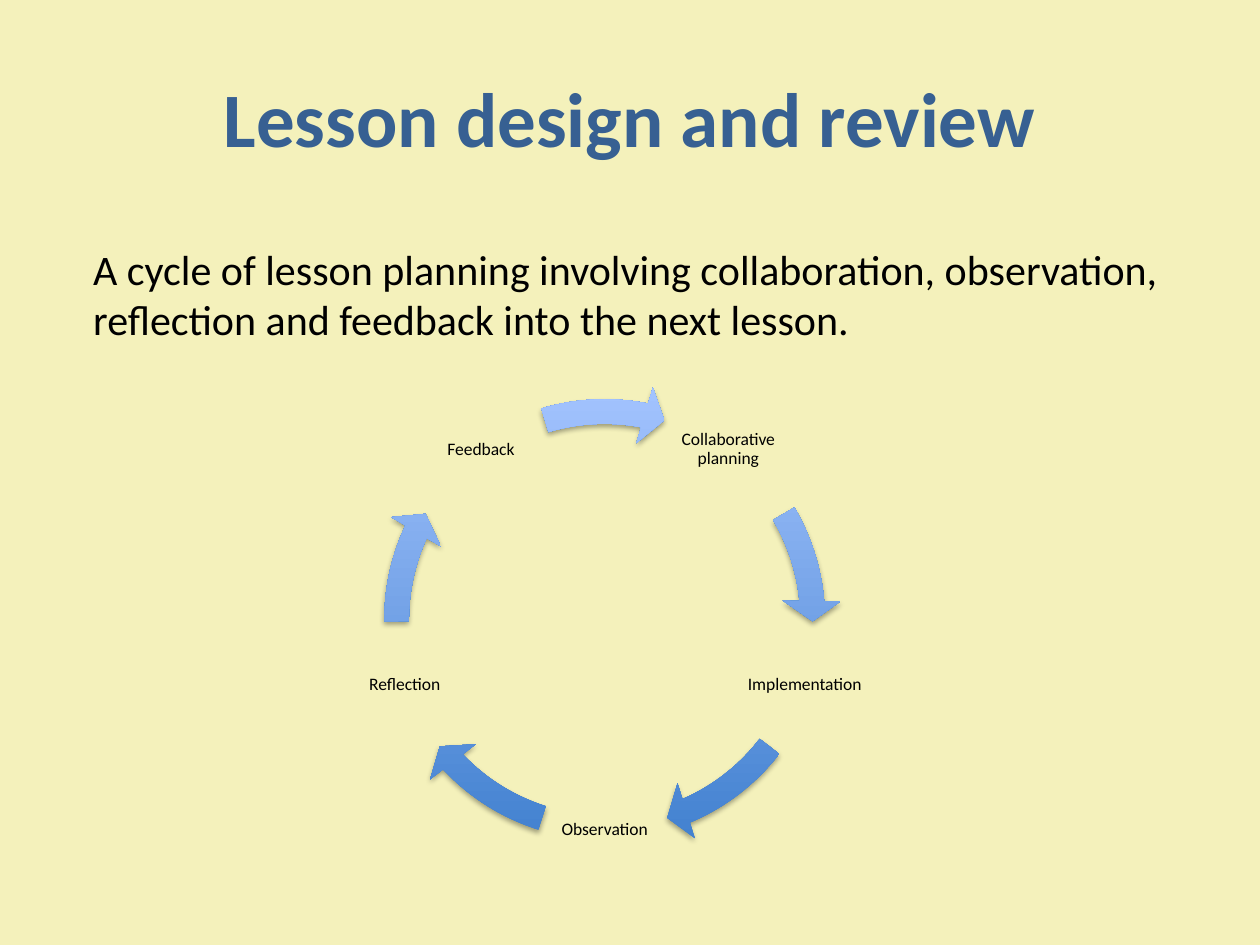
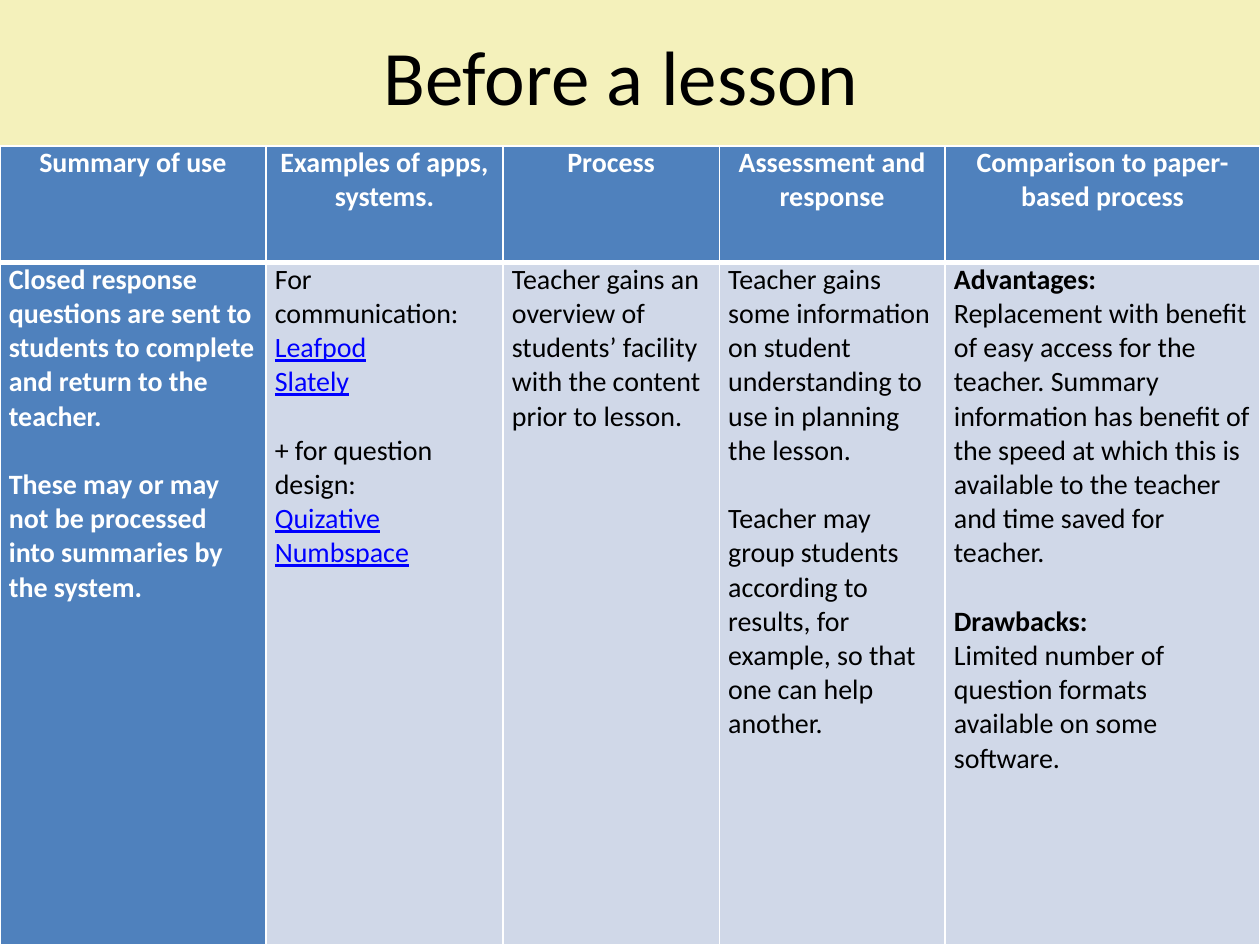
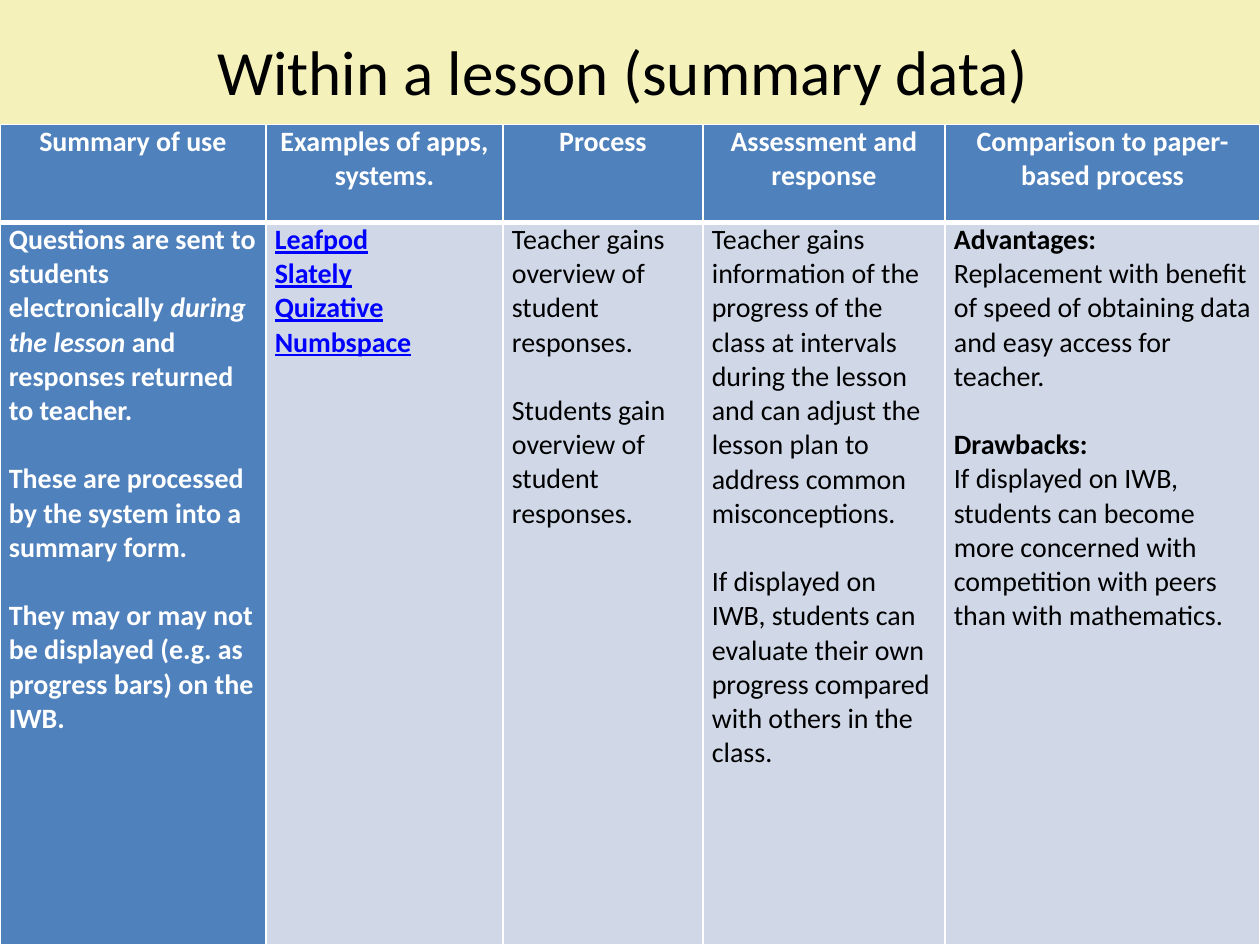
import dataclasses
import math

import lxml.etree
import pptx
import pptx.dml.color
import pptx.enum.shapes
import pptx.enum.text
import pptx.oxml
import pptx.oxml.ns
import pptx.util

Cm = pptx.util.Cm
Pt = pptx.util.Pt
ALIGN = pptx.enum.text.PP_ALIGN
ANCHOR = pptx.enum.text.MSO_ANCHOR


@dataclasses.dataclass(frozen=True)
class Theme:
    font: str = "Calibri"
    background: str = "F4F1BB"
    accent_title: str = "376092"
    text: str = "000000"
    white: str = "FFFFFF"
    link: str = "0000FF"
    header_fill: str = "4F81BD"
    body_fill: str = "D0D8E8"
    arrow_dark: str = "3F7FCE"
    arrow_light: str = "A4C4FF"
    title_size: int = 44
    long_title_size: int = 36
    intro_size: int = 24
    table_size: int = 16
    label_size: int = 10
    table_gap: float = 19.5
    thin_border: int = 1
    thick_border: int = 3


THEME = Theme()


@dataclasses.dataclass(frozen=True)
class Run:
    text: str
    size: int = THEME.table_size
    color: str = THEME.text
    bold: bool = False
    italic: bool = False
    underline: bool = False


@dataclasses.dataclass(frozen=True)
class Para:
    runs: tuple
    align: ALIGN = ALIGN.LEFT
    gap: float = 0
    line_spacing: float = 1.0


def para(text, gap=0, **style):
    return Para((Run(text, **style),), gap=gap)


def key_para(text, **style):
    return para(text, color=THEME.white, bold=True, **style)


def links(names, bold=False):
    return [para(n, color=THEME.link, underline=True, bold=bold) for n in names]


def spaced(paras):
    """Put a one-line gap before every paragraph but the first."""
    return paras[:1] + [dataclasses.replace(p, gap=THEME.table_gap) for p in paras[1:]]


def comparison(advantages, drawbacks):
    return [para("Advantages:", bold=True), para(advantages),
            para("Drawbacks:", gap=THEME.table_gap, bold=True), para(drawbacks)]


COLUMN_HEADS = ["Summary of use", "Examples of apps, systems.", "Process",
                "Assessment and response", "Comparison to paper-based process"]

CLASSROOM_APPS = ["Leafpod", "Slately"]
QUESTION_APPS = ["Quizative", "Numbspace"]

BEFORE_LESSON = [
    spaced([
        key_para("Closed response questions are sent to students to complete "
                 "and return to the teacher."),
        key_para("These may or may not be processed into summaries by the system."),
    ]),
    [para("For communication:"), *links(CLASSROOM_APPS),
     para("+ for question design:", gap=THEME.table_gap), *links(QUESTION_APPS)],
    [para("Teacher gains an overview of students’ facility with the content "
          "prior to lesson.")],
    spaced([
        para("Teacher gains some information on student understanding to use "
             "in planning the lesson."),
        para("Teacher may group students according to results, for example, "
             "so that one can help another."),
    ]),
    comparison(
        "Replacement with benefit of easy access for the teacher. Summary "
        "information has benefit of the speed at which this is available to "
        "the teacher and time saved for teacher.",
        "Limited number of question formats available on some software."),
]

WITHIN_LESSON = [
    spaced([
        Para((Run("Questions are sent to students electronically ",
                  color=THEME.white, bold=True),
              Run("during the lesson ", color=THEME.white, bold=True, italic=True),
              Run("and responses returned to teacher.",
                  color=THEME.white, bold=True))),
        key_para("These are processed by the system into a summary form."),
        key_para("They may or may not be displayed (e.g. as progress bars) on the IWB."),
    ]),
    links(CLASSROOM_APPS + QUESTION_APPS, bold=True),
    spaced([
        para("Teacher gains overview of student responses."),
        para("Students gain overview of student responses."),
    ]),
    spaced([
        para("Teacher gains information of the progress of the class at "
             "intervals during the lesson and can adjust the lesson plan to "
             "address common misconceptions."),
        para("If displayed on IWB, students can evaluate their own progress "
             "compared with others in the class."),
    ]),
    comparison(
        "Replacement with benefit of speed of obtaining data and easy access "
        "for teacher.",
        "If displayed on IWB, students can become more concerned with "
        "competition with peers than with mathematics."),
]

# Each stage with the start and end angle, in degrees, of the arrow leaving it
CYCLE = [
    ("Collaborative planning", 329.45, 354.88),
    ("Implementation", 37.57, 66.9),
    ("Observation", 107.5, 136.83),
    ("Reflection", 179.52, 204.95),
    ("Feedback", 253.32, 281.08),
]


def rgb(value):
    return pptx.dml.color.RGBColor.from_string(value)


def write(tf, paras):
    for i, item in enumerate(paras):
        p = tf.paragraphs[0] if i == 0 else tf.add_paragraph()
        p.alignment = item.align
        p.line_spacing = item.line_spacing
        p.space_before = Pt(item.gap)
        for run in item.runs:
            r = p.add_run()
            r.text = run.text
            r.font.name = THEME.font
            r.font.size = Pt(run.size)
            r.font.color.rgb = rgb(run.color)
            r.font.bold = run.bold
            r.font.italic = run.italic
            r.font.underline = run.underline


def add_text(shapes, box, item, anchor=ANCHOR.TOP, inset=None):
    """Add a wrapped text box; box is left, top, width, height in cm."""
    tf = shapes.add_textbox(*map(Cm, box)).text_frame
    tf.word_wrap = True
    tf.vertical_anchor = anchor
    if inset is not None:
        tf.margin_left = tf.margin_right = Cm(inset)
        tf.margin_top = tf.margin_bottom = Cm(inset)
    write(tf, [item])


def add_slide(prs, title, top, height, **style):
    s = prs.slides.add_slide(prs.slide_layouts[6])
    s.background.fill.solid()
    s.background.fill.fore_color.rgb = rgb(THEME.background)
    run = Run(title, **{"size": THEME.title_size, **style})
    add_text(s.shapes, (1.27, top, 22.86, height),
             Para((run,), align=ALIGN.CENTER), ANCHOR.MIDDLE)
    return s


def add_soft_shadow(sp):
    sp.shadow.inherit = False
    effects = sp._element.spPr.find(pptx.oxml.ns.qn("a:effectLst"))
    effects.append(pptx.oxml.parse_xml(
        f'<a:outerShdw {pptx.oxml.ns.nsdecls("a")} blurRad="{Pt(3.1)}" '
        f'dist="{Pt(1.8)}" dir="5400000" rotWithShape="0">'
        '<a:srgbClr val="000000"><a:alpha val="35000"/></a:srgbClr></a:outerShdw>'))


def add_cycle_arrow(shapes, cx, cy, size, start, end):
    sp = shapes.add_shape(pptx.enum.shapes.MSO_SHAPE.CIRCULAR_ARROW,
                          Cm(cx - size / 2), Cm(cy - size / 2), Cm(size), Cm(size))
    # Angles are stored in 60000ths of a degree, adjustments in 100000ths
    for i, value in enumerate((0.052, 5.6 * 0.6, end * 0.6, start * 0.6, 0.061)):
        sp.adjustments[i] = value
    sp.fill.gradient()
    sp.fill.gradient_angle = 90
    for stop, color in zip(sp.fill.gradient_stops,
                           (THEME.arrow_dark, THEME.arrow_light)):
        stop.color.rgb = rgb(color)
    for i, stop in enumerate(sp.fill.gradient_stops):
        stop.position = i
    sp.line.fill.background()
    add_soft_shadow(sp)


def add_cycle(s, cx, cy, radius, label_size, arrow_size):
    """Place the stages evenly on a circle, with an arrow after each."""
    shapes = s.shapes.add_group_shape().shapes
    for i, (label, start, end) in enumerate(CYCLE):
        angle = math.radians(-54 + i * 360 / len(CYCLE))
        left = cx + radius * math.cos(angle) - label_size / 2
        top = cy + radius * math.sin(angle) - label_size / 2
        item = Para((Run(label, size=THEME.label_size),),
                    align=ALIGN.CENTER, line_spacing=0.9)
        add_text(shapes, (left, top, label_size, label_size), item,
                 ANCHOR.MIDDLE, inset=0.03)
        add_cycle_arrow(shapes, cx, cy, arrow_size, start, end)


def set_borders(cell, top, bottom):
    tc_pr = cell._tc.get_or_add_tcPr()
    widths = {"lnL": THEME.thin_border, "lnR": THEME.thin_border,
              "lnT": top, "lnB": bottom}
    for i, (tag, width) in enumerate(widths.items()):
        tc_pr.insert(i, pptx.oxml.parse_xml(
            f'<a:{tag} {pptx.oxml.ns.nsdecls("a")} w="{Pt(width)}"><a:solidFill>'
            f'<a:srgbClr val="{THEME.white}"/></a:solidFill></a:{tag}>'))


def fill_cell(cell, paras, fill, top, bottom):
    cell.fill.solid()
    cell.fill.fore_color.rgb = rgb(fill)
    cell.margin_left = cell.margin_right = Cm(0.18)
    cell.margin_top = cell.margin_bottom = 0
    set_borders(cell, top, bottom)
    write(cell.text_frame, paras)


def add_lesson_table(s, top, col_widths, row_heights, body):
    table = s.shapes.add_table(2, len(col_widths), 0, Cm(top), Cm(sum(col_widths)),
                               Cm(sum(row_heights))).table
    table.horz_banding = False
    for row, height in zip(table.rows, row_heights):
        row.height = Cm(height)
    for c, (width, head, paras) in enumerate(zip(col_widths, COLUMN_HEADS, body)):
        table.columns[c].width = Cm(width)
        head_para = dataclasses.replace(key_para(head), align=ALIGN.CENTER)
        fill_cell(table.cell(0, c), [head_para], THEME.header_fill,
                  THEME.thin_border, THEME.thick_border)
        fill_cell(table.cell(1, c), paras,
                  THEME.header_fill if c == 0 else THEME.body_fill,
                  THEME.thick_border, THEME.thin_border)


def main():
    prs = pptx.Presentation()
    prs.slide_width, prs.slide_height = Cm(25.4), Cm(19.05)

    s = add_slide(prs, "Lesson design and review", 0.76, 3.18,
                  color=THEME.accent_title, bold=True)
    add_cycle(s, cx=12.19, cy=12.49, radius=4.24, label_size=2.54, arrow_size=9.55)
    add_text(s.shapes, (1.63, 4.78, 22.22, 2.31),
             para("A cycle of lesson planning involving collaboration, observation, "
                  "reflection and feedback into the next lesson.",
                  size=THEME.intro_size))

    s = add_slide(prs, "Before a lesson ", 0.38, 2.24)
    add_lesson_table(s, 2.94, (5.36, 4.78, 4.36, 4.55, 6.35), (2.35, 13.76),
                     BEFORE_LESSON)

    s = add_slide(prs, "Within a lesson (summary data) ", 0, 2.84,
                  size=THEME.long_title_size)
    add_lesson_table(s, 2.51, (5.36, 4.78, 4.03, 4.88, 6.35), (1.98, 14.56),
                     WITHIN_LESSON)

    prs.save("out.pptx")


if __name__ == "__main__":
    main()
